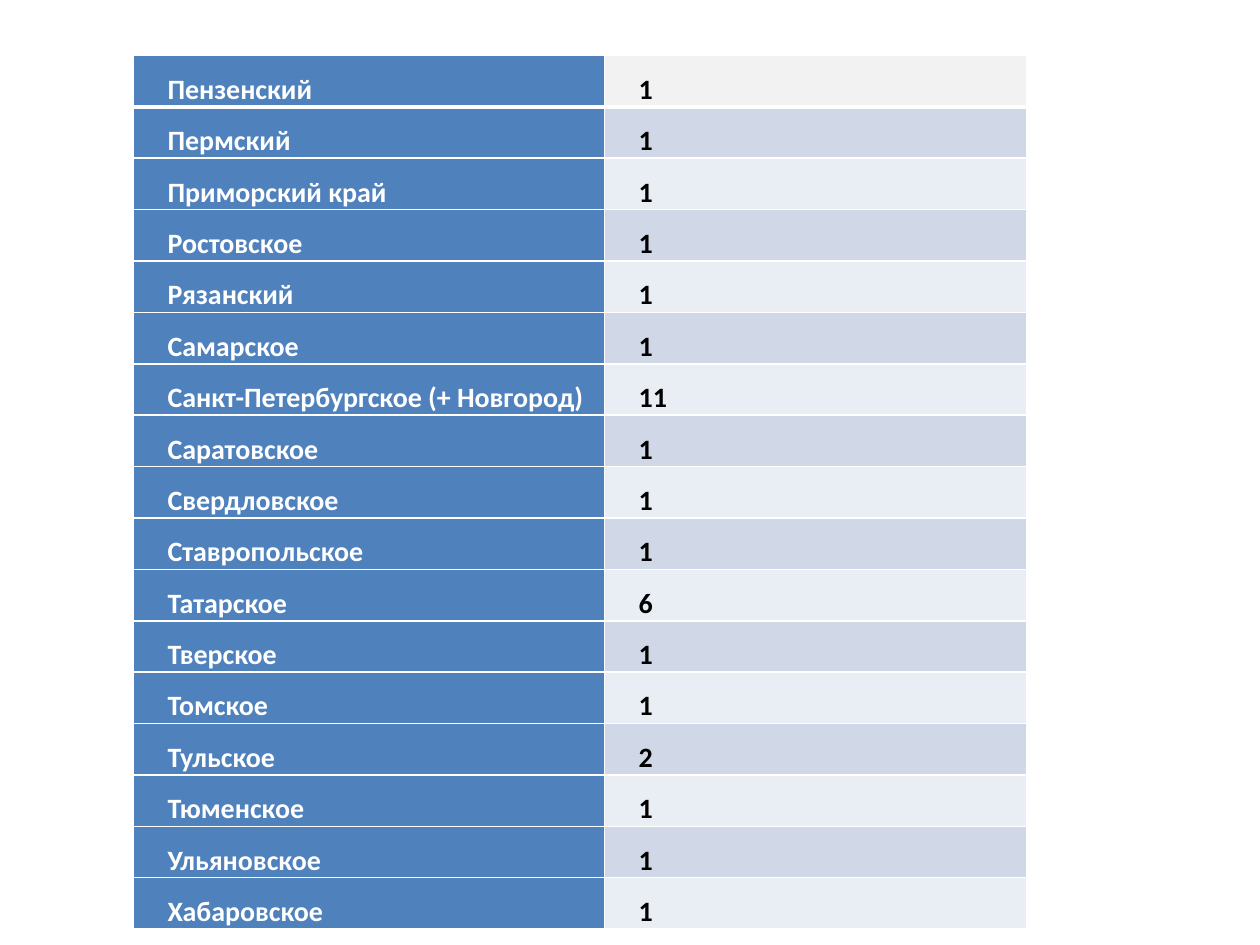
from lxml.etree import SubElement
from pptx import Presentation
from pptx.dml.color import RGBColor
from pptx.enum.text import PP_ALIGN
from pptx.oxml.ns import qn
from pptx.util import Inches, Pt

REGIONS = [
    ("Пензенский", "1"),
    ("Пермский", "1"),
    ("Приморский край", "1"),
    ("Ростовское", "1"),
    ("Рязанский", "1"),
    ("Самарское", "1"),
    ("Санкт-Петербургское (+ Новгород)", "11"),
    ("Саратовское", "1"),
    ("Свердловское", "1"),
    ("Ставропольское", "1"),
    ("Татарское", "6"),
    ("Тверское", "1"),
    ("Томское", "1"),
    ("Тульское", "2"),
    ("Тюменское", "1"),
    ("Ульяновское", "1"),
    ("Хабаровское", "1"),
]
COLORS = {
    "name": "4F81BD",
    "first": "F2F2F2",
    "odd": "D0D8E8",
    "even": "E9EDF4",
    "border": "FFFFFF",
    "name_text": "FFFFFF",
    "count_text": "000000",
}
LEFT, TOP, ROW_HEIGHT = 1.06, 0.44, 0.4
COLUMN_WIDTHS = [3.74, 3.35]
CELL_FORMAT = {
    "margin_left": Inches(0.07),
    "margin_right": Inches(0.07),
    "margin_top": 0,
    "margin_bottom": 0,
}
PARAGRAPH_FORMAT = {"alignment": PP_ALIGN.JUSTIFY, "line_spacing": 1.5}
FONT_FORMAT = {"name": "Calibri", "size": Pt(16), "bold": True}


def apply_format(target, values):
    for name, value in values.items():
        setattr(target, name, value)


def add_borders(cell, row):
    widths = {"L": 1, "R": 1, "T": 3 if row == 1 else 1, "B": 3 if row == 0 else 1}
    properties = cell._tc.get_or_add_tcPr()
    for side, width in widths.items():
        line = SubElement(properties, qn(f"a:ln{side}"), w=str(Pt(width)))
        fill = SubElement(line, qn("a:solidFill"))
        SubElement(fill, qn("a:srgbClr"), val=COLORS["border"])


def fill_cell(cell, row, text, fill_name, text_name):
    cell.text = text
    apply_format(cell, CELL_FORMAT)
    add_borders(cell, row)
    cell.fill.solid()
    cell.fill.fore_color.rgb = RGBColor.from_string(COLORS[fill_name])
    paragraph = cell.text_frame.paragraphs[0]
    apply_format(paragraph, PARAGRAPH_FORMAT)
    paragraph._p.get_or_add_pPr().set("indent", str(Inches(0.2)))
    font = paragraph.runs[0].font
    apply_format(font, FONT_FORMAT)
    font.color.rgb = RGBColor.from_string(COLORS[text_name])


def main():
    """Build the slide with the table of regional counts."""
    presentation = Presentation()
    apply_format(presentation, {"slide_width": Inches(10), "slide_height": Inches(7.5)})
    slide = presentation.slides.add_slide(presentation.slide_layouts[6])
    table = slide.shapes.add_table(
        len(REGIONS), len(COLUMN_WIDTHS), Inches(LEFT), Inches(TOP),
        Inches(sum(COLUMN_WIDTHS)), Inches(ROW_HEIGHT * len(REGIONS)),
    ).table
    for column, width in zip(table.columns, COLUMN_WIDTHS):
        column.width = Inches(width)
    for row, (name, count) in enumerate(REGIONS):
        band = "first" if row == 0 else ("odd" if row % 2 else "even")
        fill_cell(table.cell(row, 0), row, name, "name", "name_text")
        fill_cell(table.cell(row, 1), row, count, band, "count_text")
    presentation.save("out.pptx")


if __name__ == "__main__":
    main()
